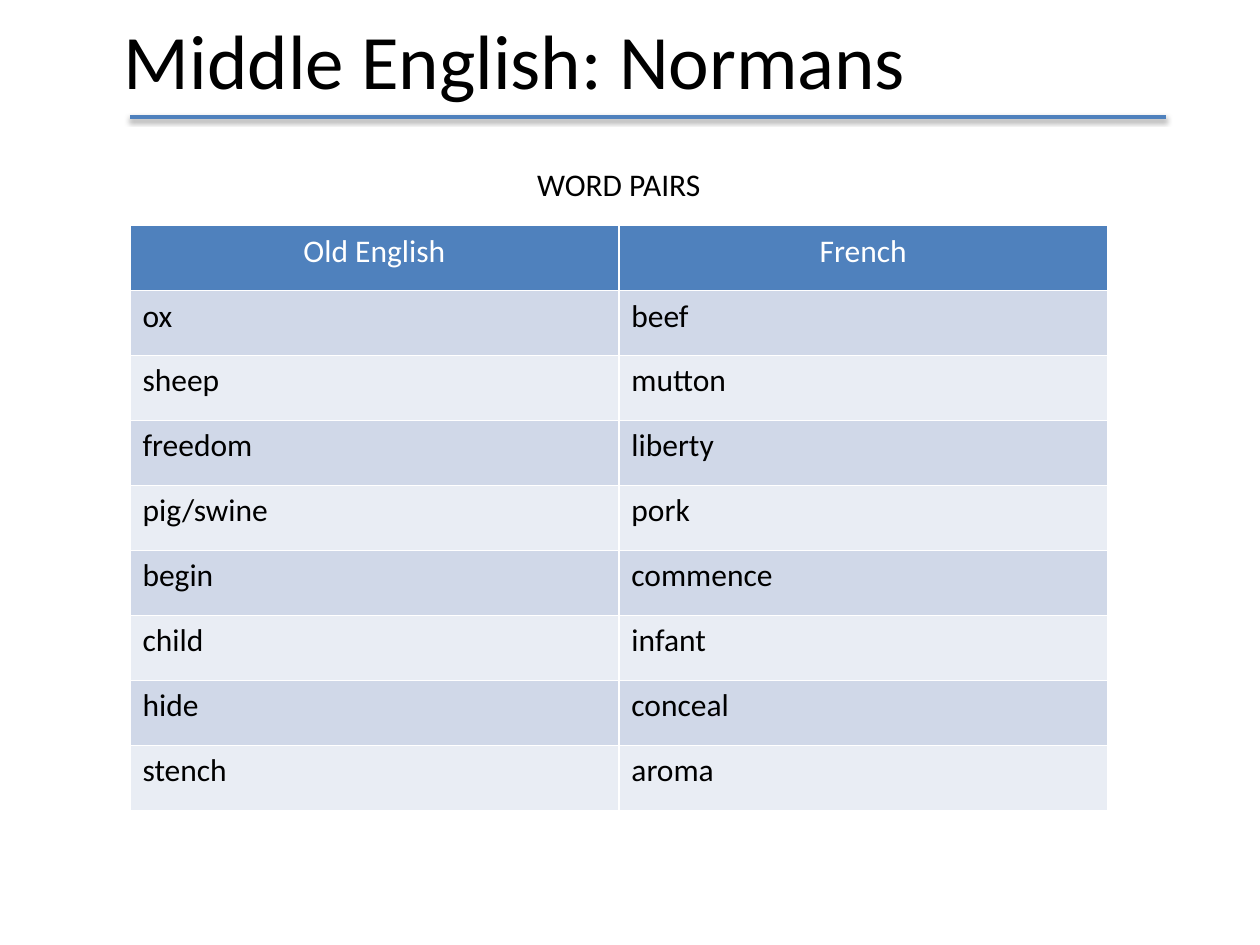
from lxml.etree import SubElement
from pptx import Presentation
from pptx.dml.color import RGBColor
from pptx.enum.shapes import MSO_CONNECTOR
from pptx.enum.text import MSO_ANCHOR, MSO_AUTO_SIZE, PP_ALIGN
from pptx.oxml.ns import qn
from pptx.util import Cm, Pt

FONT = "Calibri"
BLACK = RGBColor(0x00, 0x00, 0x00)
WHITE = RGBColor(0xFF, 0xFF, 0xFF)
BLUE = RGBColor(0x4F, 0x81, 0xBD)
BAND_DARK = RGBColor(0xD0, 0xD8, 0xE8)
BAND_LIGHT = RGBColor(0xE9, 0xED, 0xF4)

HEADINGS = ("Old English", "French")
WORD_PAIRS = (
    ("ox", "beef"),
    ("sheep", "mutton"),
    ("freedom", "liberty"),
    ("pig/swine", "pork"),
    ("begin", "commence"),
    ("child", "infant"),
    ("hide", "conceal"),
    ("stench", "aroma"),
)


def write(frame, text, size, color=BLACK, align=PP_ALIGN.LEFT):
    paragraph = frame.paragraphs[0]
    paragraph.alignment = align
    run = paragraph.add_run()
    run.text = text
    font = run.font
    font.name, font.size, font.bold = FONT, Pt(size), False
    font.color.rgb = color


def add_soft_shadow(line):
    effects = SubElement(line._element.spPr, qn("a:effectLst"))
    shadow = SubElement(effects, qn("a:outerShdw"), blurRad=str(Pt(3.1)),
                        dist=str(Pt(1.6)), dir="5400000", rotWithShape="0")
    black = SubElement(shadow, qn("a:srgbClr"), val=str(BLACK))
    SubElement(black, qn("a:alpha"), val="38000")


def place_heading(slide, left, top, width, height):
    # Title
    title = slide.shapes.title
    title.left, title.top, title.width, title.height = left, top, width, height
    title.text_frame.vertical_anchor = MSO_ANCHOR.MIDDLE
    write(title.text_frame, "Middle English: Normans", 44)

    # Rule below the title
    rule_left, rule_y = left + Cm(0.38), top + height
    rule = slide.shapes.add_connector(
        MSO_CONNECTOR.STRAIGHT, rule_left, rule_y, rule_left + Cm(20.88), rule_y)
    rule.line.color.rgb = BLUE
    rule.line.width = Pt(2)
    add_soft_shadow(rule)


def place_word_pairs(slide, left, top, width, height):
    # Table with a heading row and banded rows
    rows = (HEADINGS, *WORD_PAIRS)
    table_top = top + Cm(1.35)
    pairs = slide.shapes.add_table(len(rows), len(HEADINGS), left, table_top,
                                   width, top + height - table_top).table
    for r, words in enumerate(rows):
        for c, word in enumerate(words):
            cell = pairs.cell(r, c)
            cell.fill.solid()
            if r == 0:
                cell.fill.fore_color.rgb = BLUE
                write(cell.text_frame, word, 18, WHITE, PP_ALIGN.CENTER)
            else:
                cell.fill.fore_color.rgb = BAND_DARK if r % 2 else BAND_LIGHT
                write(cell.text_frame, word, 18)

    # Caption above the table
    caption = slide.shapes.add_textbox(left, top, width, Cm(1.02)).text_frame
    caption.word_wrap = True
    caption.auto_size = MSO_AUTO_SIZE.SHAPE_TO_FIT_TEXT
    write(caption, "WORD PAIRS", 18, align=PP_ALIGN.CENTER)


def main():
    deck = Presentation()
    deck.slide_width, deck.slide_height = Cm(25.4), Cm(19.05)
    slide = deck.slides.add_slide(deck.slide_layouts[0])
    subtitle = slide.placeholders[1].element
    subtitle.getparent().remove(subtitle)

    place_heading(slide, Cm(2.24), Cm(0), Cm(19.61), Cm(2.36))
    place_word_pairs(slide, Cm(2.62), Cm(3.2), Cm(19.71), Cm(13.14))
    deck.save("out.pptx")


if __name__ == "__main__":
    main()
